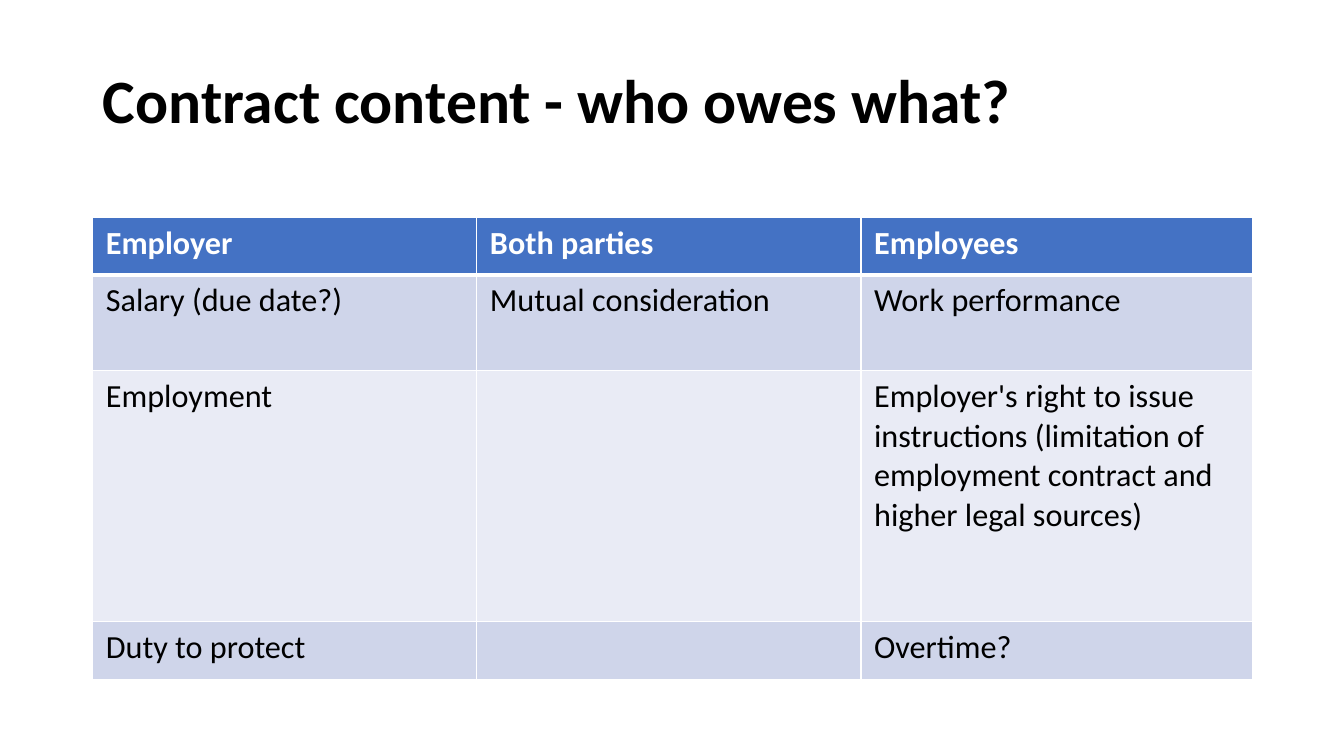
from dataclasses import dataclass

from lxml.etree import SubElement
from pptx import Presentation
from pptx.dml.color import RGBColor
from pptx.enum.text import MSO_ANCHOR as Anchor, PP_ALIGN as Align
from pptx.oxml.ns import qn
from pptx.slide import Slide
from pptx.table import _Cell as Cell
from pptx.util import Inches, Pt


@dataclass(frozen=True)
class Theme:
    font: str = "Calibri"
    title_size: int = 44
    table_size: int = 23
    ink: str = "000000"
    paper: str = "FFFFFF"
    header: str = "4472C4"
    bands: tuple[str, str] = ("CFD5EA", "E9EBF5")
    thin: int = 1
    thick: int = 3


@dataclass(frozen=True)
class DutyRow:
    height: float
    employer: str
    both: str
    employees: str


THEME = Theme()
TITLE = "Contract content - who owes what?"
LEFT, WIDTH = 0.92, 11.5
COLUMN_WIDTHS = (3.81, 3.81, 3.88)
DUTIES = (
    DutyRow(0.57, "Employer", "Both parties", "Employees"),
    DutyRow(0.95, "Salary (due date?)", "Mutual consideration", "Work performance"),
    DutyRow(2.49, "Employment", "",
            "Employer's right to issue instructions (limitation of "
            "employment contract and higher legal sources)"),
    DutyRow(0.57, "Duty to protect", "", "Overtime?"),
)


def add_title(slide: Slide) -> None:
    title = slide.shapes.title
    title.left, title.top = Inches(LEFT), Inches(0.2)
    title.width, title.height = Inches(WIDTH), Inches(1.65)
    title.text_frame.text = TITLE
    title.text_frame.vertical_anchor = Anchor.MIDDLE
    heading = title.text_frame.paragraphs[0]
    heading.alignment = Align.LEFT
    heading.line_spacing = 0.9
    heading.font.name = THEME.font
    heading.font.size = Pt(THEME.title_size)
    heading.font.bold = True
    heading.font.color.rgb = RGBColor.from_string(THEME.ink)


def set_borders(cell: Cell, top: int, bottom: int) -> None:
    """Draw the cell's four borders; top and bottom are widths in points."""
    properties = cell._tc.get_or_add_tcPr()
    sides = {"L": THEME.thin, "R": THEME.thin, "T": top, "B": bottom}
    for position, (side, width) in enumerate(sides.items()):
        border = SubElement(properties, qn(f"a:ln{side}"), w=str(Pt(width)))
        fill = SubElement(border, qn("a:solidFill"))
        SubElement(fill, qn("a:srgbClr"), val=THEME.paper)
        # Borders must come before the cell fill
        properties.insert(position, border)


def format_cell(cell: Cell, text: str, row: int) -> None:
    is_header = row == 0
    cell.margin_left = cell.margin_right = Inches(0.13)
    cell.margin_top = cell.margin_bottom = Inches(0.06)
    cell.fill.solid()
    fill = THEME.header if is_header else THEME.bands[(row - 1) % 2]
    cell.fill.fore_color.rgb = RGBColor.from_string(fill)
    set_borders(cell,
                top=THEME.thick if row == 1 else THEME.thin,
                bottom=THEME.thick if is_header else THEME.thin)
    cell.text = text
    font = cell.text_frame.paragraphs[0].font
    font.name = THEME.font
    font.size = Pt(THEME.table_size)
    font.bold = is_header
    font.color.rgb = RGBColor.from_string(THEME.paper if is_header else THEME.ink)


def add_duties_table(slide: Slide) -> None:
    height = sum(duty.height for duty in DUTIES)
    duties_table = slide.shapes.add_table(
        len(DUTIES), len(COLUMN_WIDTHS),
        Inches(LEFT), Inches(2.16), Inches(WIDTH), Inches(height)).table
    for column, width in zip(duties_table.columns, COLUMN_WIDTHS):
        column.width = Inches(width)
    for row, duty in enumerate(DUTIES):
        duties_table.rows[row].height = Inches(duty.height)
        for column, text in enumerate((duty.employer, duty.both, duty.employees)):
            format_cell(duties_table.cell(row, column), text, row)


def main() -> None:
    presentation = Presentation()
    presentation.slide_width = Inches(13.33)
    presentation.slide_height = Inches(7.5)
    # Title-only layout
    slide = presentation.slides.add_slide(presentation.slide_layouts[5])
    add_title(slide)
    add_duties_table(slide)
    presentation.save("out.pptx")


if __name__ == "__main__":
    main()
